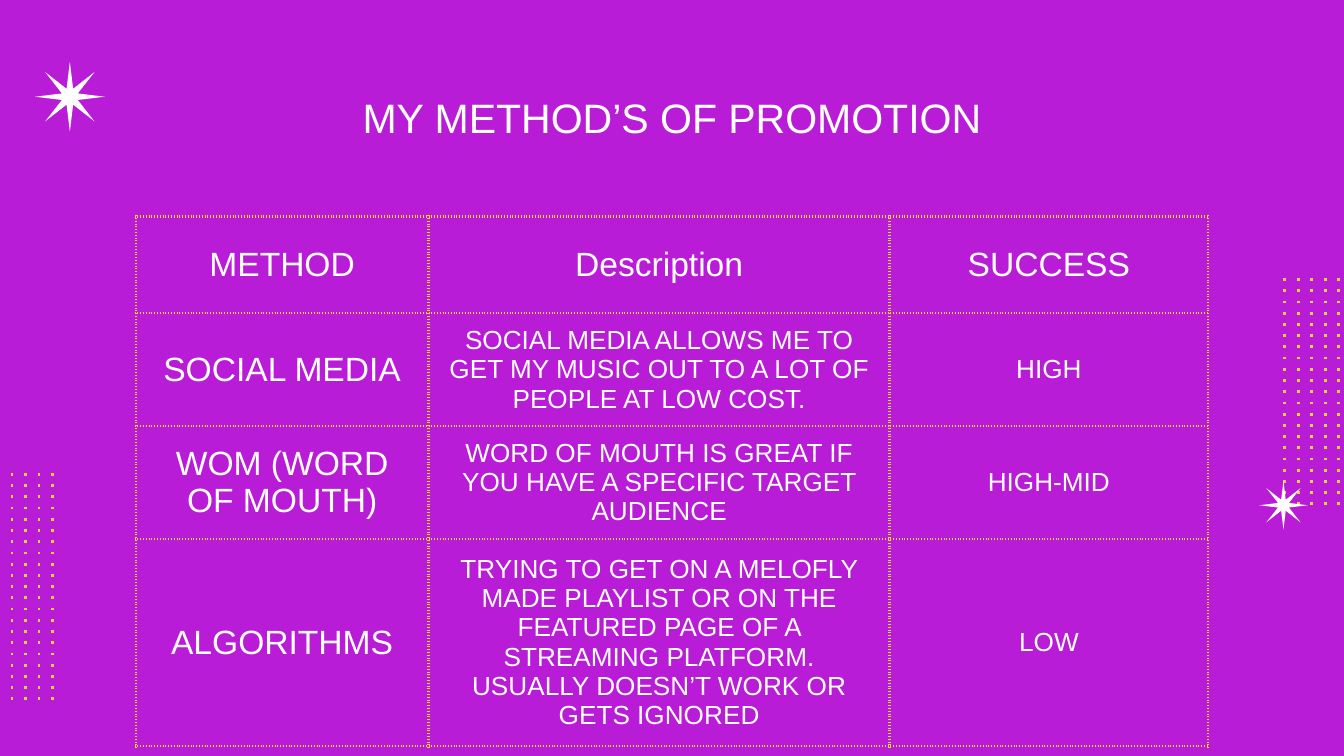
"""Build a slide with a table of promotion methods and how well they work."""
from lxml import etree
from pptx import Presentation
from pptx.dml.color import RGBColor
from pptx.enum.shapes import MSO_CONNECTOR, MSO_SHAPE
from pptx.enum.text import MSO_ANCHOR, PP_ALIGN
from pptx.oxml.ns import qn
from pptx.util import Inches, Pt

STRAIGHT = MSO_CONNECTOR.STRAIGHT
STAR = MSO_SHAPE.STAR_8_POINT
MIDDLE = MSO_ANCHOR.MIDDLE
CENTER = PP_ALIGN.CENTER

COLORS = {"background": "B91CD6", "dots": "FFD633", "white": "FFFFFF"}
FONT = "Arial"
LINE_WIDTH = Pt(1.5)
TITLE = "MY METHOD’S OF PROMOTION"
ROWS = [
    ("METHOD", "Description", "SUCCESS"),
    ("SOCIAL MEDIA",
     "SOCIAL MEDIA ALLOWS ME TO GET MY MUSIC OUT TO A LOT OF PEOPLE AT LOW COST.",
     "HIGH"),
    ("WOM (WORD OF MOUTH)",
     "WORD OF MOUTH IS GREAT IF YOU HAVE A SPECIFIC TARGET AUDIENCE",
     "HIGH-MID"),
    ("ALGORITHMS",
     "TRYING TO GET ON A MELOFLY MADE PLAYLIST OR ON THE FEATURED PAGE OF A "
     "STREAMING PLATFORM. USUALLY DOESN’T WORK OR GETS IGNORED",
     "LOW"),
]
COLUMN_WIDTHS = (2.18, 3.43, 2.37)
ROW_HEIGHTS = (0.72, 0.75, 0.75, 0.75)
TABLE_HEIGHT = 3.74
DOT_FIELDS = [(9.56, 2.07, 5), (0.09, 3.52, 4)]
DOT_GAP, DOT_LENGTH = 0.1, 1.72
STARS = [(0.26, 0.46, 0.52), (9.37, 3.58, 0.36)]


def color(name):
    return RGBColor.from_string(COLORS[name])


def add_dots(line_element):
    etree.SubElement(line_element, qn("a:prstDash"), val="dot")


def add_dot_field(page, left, top, count):
    for index in range(count):
        x = Inches(left + index * DOT_GAP)
        connector = page.shapes.add_connector(
            STRAIGHT, x, Inches(top), x, Inches(top + DOT_LENGTH))
        connector.line.color.rgb = color("dots")
        connector.line.width = LINE_WIDTH
        properties = connector._element.spPr
        add_dots(properties.find(qn("a:ln")))
        etree.SubElement(properties, qn("a:effectLst"))


def add_star(page, left, top, size):
    star = page.shapes.add_shape(
        STAR, Inches(left), Inches(top), Inches(size), Inches(size))
    star.adjustments[0] = 0.123
    star.shadow.inherit = False
    star.fill.solid()
    star.fill.fore_color.rgb = color("white")
    star.line.fill.background()


def write(frame, text, size):
    frame.text = text
    frame.word_wrap = True
    para = frame.paragraphs[0]
    para.alignment = CENTER
    font = para.runs[0].font
    font.name, font.size, font.bold = FONT, Pt(size), False
    font.color.rgb = color("white")


def add_borders(cell):
    properties = cell._tc.get_or_add_tcPr()
    for position, side in enumerate(("lnL", "lnR", "lnT", "lnB")):
        border = etree.Element(qn(f"a:{side}"), w=str(LINE_WIDTH))
        fill = etree.SubElement(border, qn("a:solidFill"))
        etree.SubElement(fill, qn("a:srgbClr"), val=COLORS["dots"])
        add_dots(border)
        properties.insert(position, border)


def add_title(page):
    box = page.shapes.add_textbox(
        Inches(0.78), Inches(0.59), Inches(8.44), Inches(0.52))
    frame = box.text_frame
    frame.margin_left = frame.margin_right = Inches(0.1)
    frame.margin_top = frame.margin_bottom = Inches(0.1)
    write(frame, TITLE, 22)


def add_methods_table(page):
    holder = page.shapes.add_table(
        len(ROWS), len(COLUMN_WIDTHS), Inches(1.01), Inches(1.61),
        Inches(sum(COLUMN_WIDTHS)), Inches(TABLE_HEIGHT))
    table = holder.table
    table.first_row = table.horz_banding = False
    for column, width in zip(table.columns, COLUMN_WIDTHS):
        column.width = Inches(width)
    for row_index, (row, height) in enumerate(zip(table.rows, ROW_HEIGHTS)):
        row.height = Inches(height)
        for column_index, cell in enumerate(row.cells):
            heading = row_index == 0 or column_index == 0
            write(cell.text_frame, ROWS[row_index][column_index], 18 if heading else 14)
            cell.vertical_anchor = MIDDLE
            cell.margin_left = cell.margin_right = Inches(0.1)
            cell.margin_top = cell.margin_bottom = Inches(0.07)
            cell.fill.background()
            add_borders(cell)
    holder.height = Inches(TABLE_HEIGHT)


def main():
    deck = Presentation()
    deck.slide_width, deck.slide_height = Inches(10), Inches(10 * 9 / 16)
    page = deck.slides.add_slide(deck.slide_layouts[6])
    page.background.fill.solid()
    page.background.fill.fore_color.rgb = color("background")
    for field in DOT_FIELDS:
        add_dot_field(page, *field)
    for star in STARS:
        add_star(page, *star)
    add_title(page)
    add_methods_table(page)
    deck.save("out.pptx")


if __name__ == "__main__":
    main()
